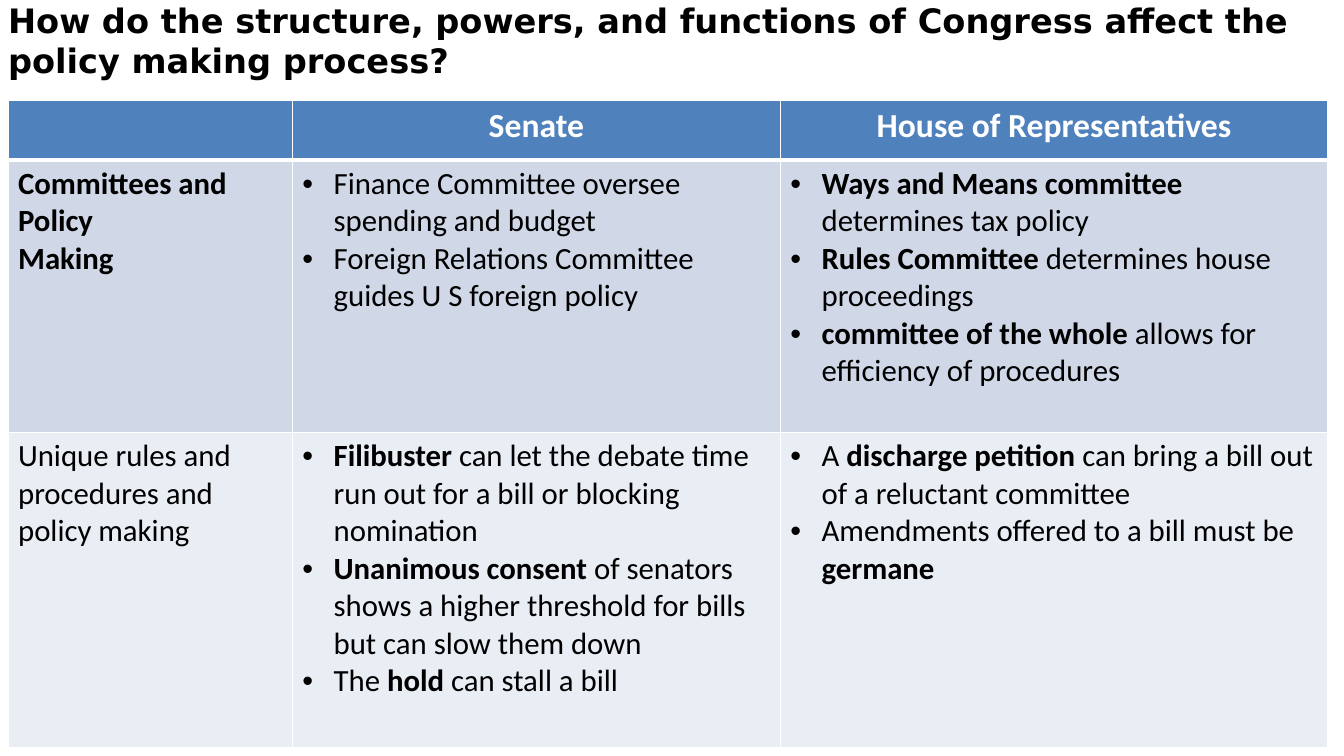
from dataclasses import dataclass

from lxml import etree
from pptx import Presentation
from pptx.dml.color import RGBColor
from pptx.enum import text
from pptx.oxml import ns
from pptx.util import Inches, Pt


@dataclass(frozen=True)
class Theme:
    title_font: str = "DejaVu Sans"
    table_font: str = "Calibri"
    title_size: int = 24
    header_size: int = 24
    body_size: int = 22
    ink: str = "000000"
    white: str = "FFFFFF"
    header_fill: str = "4F81BD"
    band_fills: tuple = ("D0D8E8", "E9EDF4")
    border: float = 1
    header_border: float = 3
    indent: float = 0.31


TITLE = ("How do the structure, powers, and functions of Congress affect the "
         "policy making process?")
COLUMN_WIDTHS = (2.82, 4.84, 5.43)
ROW_HEIGHTS = (0.59, 2.7, 3.13)
HEADERS = ("", "Senate", "House of Representatives")
# Asterisks enclose bold words.
ROWS = (
    (
        ("*Committees and Policy*", "*Making*"),
        ("Finance Committee oversee spending and budget",
         "Foreign Relations Committee guides U S foreign policy"),
        ("*Ways and Means committee *determines tax policy",
         "*Rules Committee *determines house proceedings",
         "*committee of the whole *allows for efficiency of procedures"),
    ),
    (
        ("Unique rules and procedures and policy making",),
        ("*Filibuster* can let the debate time run out for a bill or blocking nomination",
         "*Unanimous consent *of senators shows a higher threshold for bills "
         "but can slow them down",
         "The *hold* can stall a bill"),
        ("A *discharge petition *can bring a bill out of a reluctant committee",
         "Amendments offered to a bill must be *germane*"),
    ),
)


def set_all(target, values):
    for name, value in values.items():
        setattr(target, name, value)


class PageBuilder:
    def __init__(self, page, theme):
        self.page = page
        self.theme = theme

    def add_spans(self, para, marked, font, size, color):
        """Add spans to para, bold between asterisks."""
        for index, words in enumerate(marked.split("*")):
            if words:
                span = para.add_run()
                span.text = words
                set_all(span.font, {"name": font, "size": Pt(size), "bold": index % 2 == 1})
                span.font.color.rgb = RGBColor.from_string(color)

    def title(self, words, left, top, width, height):
        box = self.page.shapes.title
        set_all(box, {"left": Inches(left), "top": Inches(top),
                      "width": Inches(width), "height": Inches(height)})
        set_all(box.text_frame, {
            "margin_left": 0, "margin_top": 0, "margin_right": 0, "margin_bottom": 0,
            "word_wrap": True, "vertical_anchor": text.MSO_ANCHOR.TOP,
            "auto_size": text.MSO_AUTO_SIZE.SHAPE_TO_FIT_TEXT})
        para = box.text_frame.paragraphs[0]
        para.alignment = text.PP_ALIGN.LEFT
        self.add_spans(para, f"*{words}*", self.theme.title_font,
                       self.theme.title_size, self.theme.ink)

    def table(self, left, top, widths, heights):
        frame = self.page.shapes.add_table(
            len(heights), len(widths), Inches(left), Inches(top),
            Inches(sum(widths)), Inches(sum(heights)))
        grid = frame.table
        for column, width in zip(grid.columns, widths):
            column.width = Inches(width)
        for row, height in zip(grid.rows, heights):
            row.height = Inches(height)
        return grid

    def borders(self, cell, top, bottom):
        props = cell._tc.get_or_add_tcPr()
        sides = {"L": self.theme.border, "R": self.theme.border, "T": top, "B": bottom}
        for index, (side, points) in enumerate(sides.items()):
            line = etree.Element(ns.qn(f"a:ln{side}"), w=str(Pt(points)))
            fill = etree.SubElement(line, ns.qn("a:solidFill"))
            etree.SubElement(fill, ns.qn("a:srgbClr"), val=self.theme.white)
            props.insert(index, line)

    def bullet(self, para):
        props = para._p.get_or_add_pPr()
        indent = Inches(self.theme.indent)
        props.set("marL", str(indent))
        props.set("indent", str(-indent))
        etree.SubElement(props, ns.qn("a:buFont"), typeface="Arial")
        etree.SubElement(props, ns.qn("a:buChar"), char="•")

    def fill(self, cell, color):
        cell.fill.solid()
        cell.fill.fore_color.rgb = RGBColor.from_string(color)

    def header_cell(self, cell, words):
        theme = self.theme
        self.fill(cell, theme.header_fill)
        self.borders(cell, theme.border, theme.header_border)
        para = cell.text_frame.paragraphs[0]
        para.alignment = text.PP_ALIGN.CENTER
        self.add_spans(para, f"*{words}*", theme.table_font, theme.header_size, theme.white)

    def body_cell(self, cell, lines, band, bulleted):
        theme = self.theme
        self.fill(cell, theme.band_fills[band])
        self.borders(cell, theme.border if band else theme.header_border, theme.border)
        for index, words in enumerate(lines):
            frame = cell.text_frame
            para = frame.add_paragraph() if index else frame.paragraphs[0]
            if bulleted:
                self.bullet(para)
            self.add_spans(para, words, theme.table_font, theme.body_size, theme.ink)


def main():
    deck = Presentation()
    set_all(deck, {"slide_width": Inches(13.33), "slide_height": Inches(7.5)})
    builder = PageBuilder(deck.slides.add_slide(deck.slide_layouts[5]), Theme())
    builder.title(TITLE, 0.08, 0, 13.17, 0.81)
    grid = builder.table(0.08, 1, COLUMN_WIDTHS, ROW_HEIGHTS)
    for column, words in enumerate(HEADERS):
        builder.header_cell(grid.cell(0, column), words)
    for band, row in enumerate(ROWS):
        for column, lines in enumerate(row):
            builder.body_cell(grid.cell(band + 1, column), lines, band, column > 0)
    deck.save("out.pptx")


if __name__ == "__main__":
    main()
